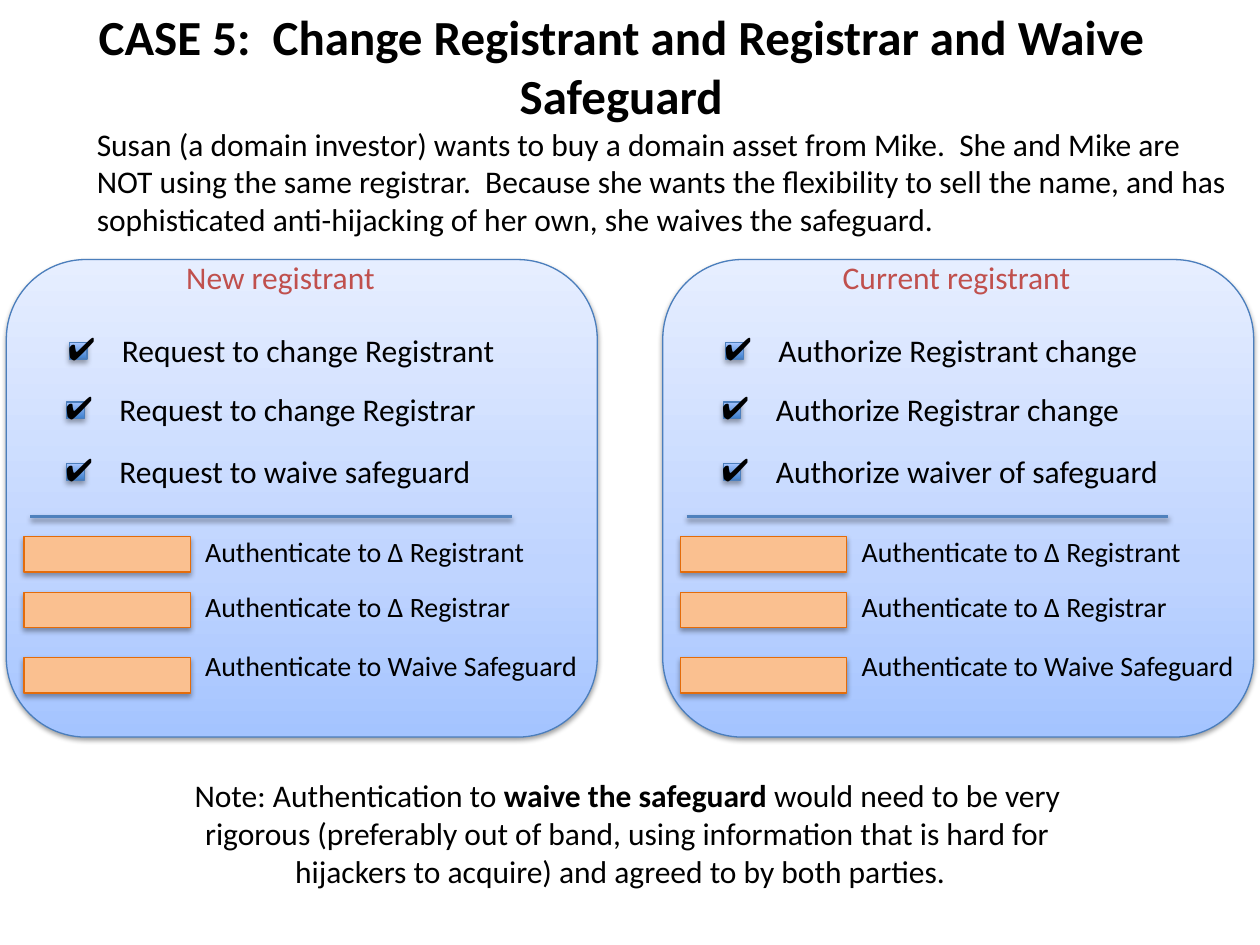
from dataclasses import dataclass

import pptx
import pptx.dml.color
import pptx.enum.dml
import pptx.enum.shapes
import pptx.enum.text
import pptx.oxml
import pptx.oxml.ns
import pptx.util
from pptx.util import Inches

SHAPE = pptx.enum.shapes.MSO_SHAPE
ALIGN = pptx.enum.text.PP_ALIGN
AUTO = pptx.enum.text.MSO_AUTO_SIZE


@dataclass(frozen=True)
class Theme:
    font: str = "Calibri"
    mark_font: str = "Arial"
    ink: str = "000000"
    heading: str = "C0504D"
    outline: str = "4B7EBC"
    rule: str = "4F81BD"
    bar: str = "FAC090"
    bar_outline: str = "E46C0A"
    panel: tuple = ((0, "A4C4FF"), (35, "BFD4FF"), (100, "E6EEFF"))
    box: tuple = ((0, "3F80CE"), (100, "A4C4FF"))
    title_size: int = 28
    body_size: int = 18
    label_size: int = 16


@dataclass(frozen=True)
class Item:
    text: str
    width: float


@dataclass(frozen=True)
class Panel:
    left: float
    heading: Item
    steps: tuple[Item, ...]


THEME = Theme()
STEP_PLACES = ((0.55, 2.72), (0.53, 3.19), (0.53, 3.68))
AUTH_ITEMS = (
    (4.26, 4.19, Item("Authenticate to Δ Registrant", 2.79)),
    (4.7, 4.63, Item("Authenticate to Δ Registrar", 2.68)),
    (5.22, 5.1, Item("Authenticate to Waive Safeguard", 3.22)),
)
PANELS = (
    Panel(0.05, Item("New registrant", 1.73), (
        Item("Request to change Registrant", 3.33),
        Item("Request to change Registrar", 3.2),
        Item("Request to waive safeguard", 3.04),
    )),
    Panel(5.26, Item("Current registrant", 2.04), (
        Item("Authorize Registrant change", 3.1),
        Item("Authorize Registrar change", 2.97),
        Item("Authorize waiver of safeguard", 3.29),
    )),
)


def rgb(value: str):
    return pptx.dml.color.RGBColor.from_string(value)


def place(sp, x: float, y: float, w: float, h: float) -> None:
    sp.left, sp.top, sp.width, sp.height = map(Inches, (x, y, w, h))


def write(tf, text: str, *, size: int = THEME.body_size, font: str = THEME.font,
          color: str = THEME.ink, bold: str = "", align=ALIGN.LEFT) -> None:
    p = tf.paragraphs[0]
    p.alignment = align
    before, strong, after = text.partition(bold) if bold else (text, "", "")
    for part, is_bold in ((before, False), (strong, True), (after, False)):
        if part:
            r = p.add_run()
            r.text = part
            r.font.name, r.font.size = font, pptx.util.Pt(size)
            r.font.bold = is_bold
            r.font.color.rgb = rgb(color)


def add_text(s, text: str, x: float, y: float, w: float, h: float, *,
             wrap: bool = False, **style) -> None:
    tf = s.shapes.add_textbox(*map(Inches, (x, y, w, h))).text_frame
    tf.word_wrap = wrap
    tf.auto_size = AUTO.SHAPE_TO_FIT_TEXT
    write(tf, text, **style)


def add_shadow(sp, alpha: int, distance: float) -> None:
    ns = pptx.oxml.ns.nsdecls("a")
    sp._element.spPr.append(pptx.oxml.parse_xml(
        f'<a:effectLst {ns}><a:outerShdw blurRad="{pptx.util.Pt(3.1)}" '
        f'dist="{pptx.util.Pt(distance)}" dir="5400000" rotWithShape="0">'
        f'<a:srgbClr val="000000"><a:alpha val="{alpha * 1000}"/></a:srgbClr>'
        f'</a:outerShdw></a:effectLst>'))


def add_block(s, kind, x: float, y: float, w: float, h: float, *,
              fill: str | tuple, line: str, alpha: int = 35,
              distance: float = 1.8) -> None:
    sp = s.shapes.add_shape(kind, *map(Inches, (x, y, w, h)))
    if isinstance(fill, str):
        sp.fill.solid()
        sp.fill.fore_color.rgb = rgb(fill)
    else:
        sp.fill.gradient()
        sp.fill.gradient_angle = 90
        stops = sp._element.spPr.find(".//" + pptx.oxml.ns.qn("a:gsLst"))
        for stop in list(stops):
            stops.remove(stop)
        ns = pptx.oxml.ns.nsdecls("a")
        for position, color in fill:
            stops.append(pptx.oxml.parse_xml(
                f'<a:gs {ns} pos="{position * 1000}"><a:srgbClr val="{color}"/></a:gs>'))
    sp.line.color.rgb = rgb(line)
    sp.line.width = pptx.util.Pt(0.75)
    add_shadow(sp, alpha, distance)


def add_rule(s, x1: float, x2: float, y: float) -> None:
    line = s.shapes.add_connector(pptx.enum.shapes.MSO_CONNECTOR.STRAIGHT,
                                  *map(Inches, (x1, y, x2, y)))
    line.line.color.rgb = rgb(THEME.rule)
    line.line.width = pptx.util.Pt(2)
    add_shadow(line, 38, 1.6)


def add_panel(s, panel: Panel) -> None:
    dx = panel.left - PANELS[0].left
    add_block(s, SHAPE.ROUNDED_RECTANGLE, panel.left, 2.06, 4.69, 3.79,
              fill=THEME.panel, line=THEME.outline, alpha=38, distance=1.6)
    add_text(s, panel.heading.text, dx + 1.38, 2, panel.heading.width, 0.4,
             color=THEME.heading)
    for (x, y), step in zip(STEP_PLACES, panel.steps):
        add_block(s, SHAPE.RECTANGLE, dx + x, y, 0.14, 0.13,
                  fill=THEME.box, line=THEME.outline)
        add_text(s, "✔", dx + x - 0.11, y - 0.16, 0.43, 0.4, font=THEME.mark_font)
        add_text(s, step.text, dx + x + 0.32, y - 0.14, step.width, 0.4)
    add_rule(s, dx + 0.24, dx + 4.06, 4.1)
    for bar_top, label_top, item in AUTH_ITEMS:
        add_block(s, SHAPE.RECTANGLE, dx + 0.19, bar_top, 1.32, 0.28,
                  fill=THEME.bar, line=THEME.bar_outline)
        add_text(s, item.text, dx + 1.53, label_top, item.width, 0.37,
                 size=THEME.label_size)


def main() -> None:
    prs = pptx.Presentation()
    prs.slide_width, prs.slide_height = Inches(10), Inches(7.5)
    s = prs.slides.add_slide(prs.slide_layouts[5])

    title = "CASE 5:  Change Registrant and Registrar and Waive Safeguard"
    sp = s.shapes.title
    place(sp, 0.67, 0, 8.52, 1.04)
    sp.text_frame.auto_size = AUTO.NONE
    write(sp.text_frame, title, size=THEME.title_size, bold=title, align=ALIGN.CENTER)

    for panel in PANELS:
        add_panel(s, panel)

    add_text(s, "Susan (a domain investor) wants to buy a domain asset from Mike.  "
             "She and Mike are NOT using the same registrar.  Because she wants the "
             "flexibility to sell the name, and has sophisticated anti-hijacking of "
             "her own, she waives the safeguard.", 0.67, 0.94, 9.17, 1.01, wrap=True)
    add_text(s, "Note: Authentication to waive the safeguard would need to be very "
             "rigorous (preferably out of band, using information that is hard for "
             "hijackers to acquire) and agreed to by both parties.  ",
             1.3, 6.11, 7.36, 1.01, wrap=True, bold="waive the safeguard",
             align=ALIGN.CENTER)
    prs.save("out.pptx")


if __name__ == "__main__":
    main()
